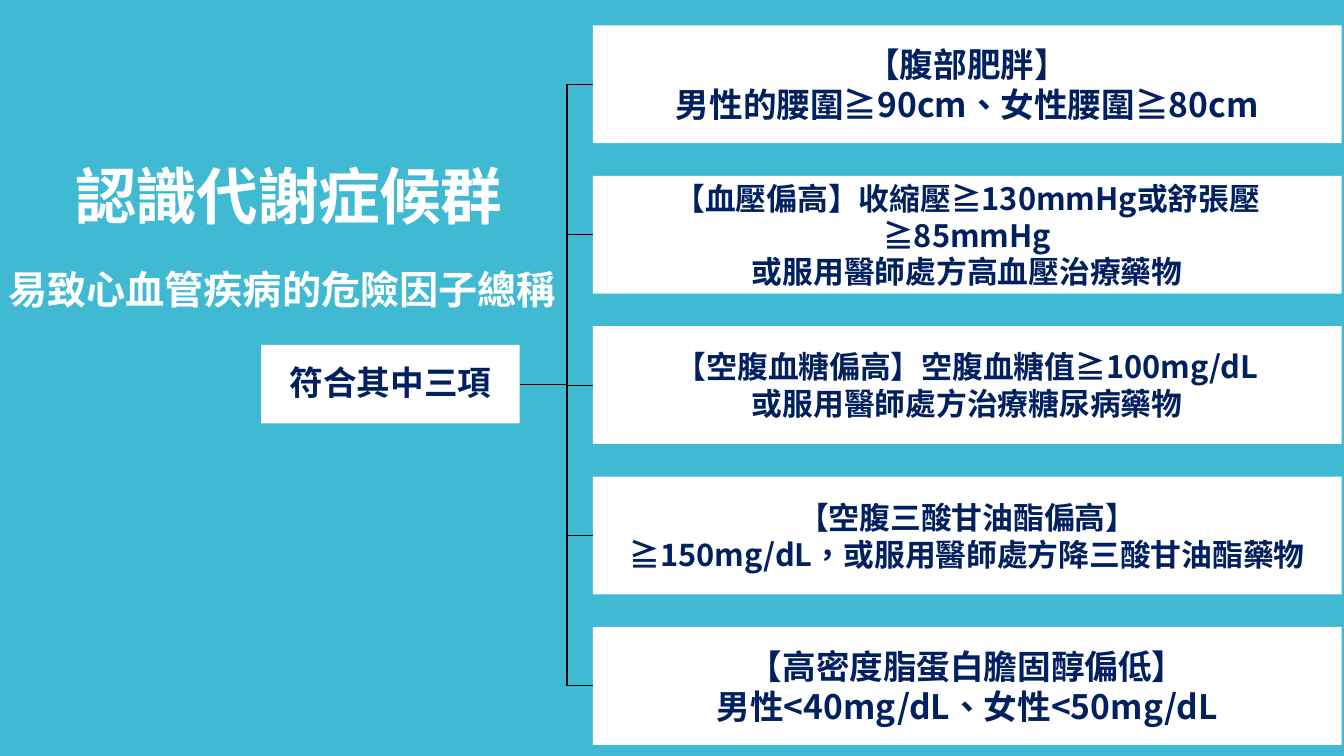
from dataclasses import dataclass

from lxml.etree import SubElement
from pptx import Presentation
from pptx.dml.color import RGBColor
from pptx.enum.shapes import MSO_SHAPE
from pptx.enum.text import MSO_ANCHOR, MSO_AUTO_SIZE, PP_ALIGN
from pptx.oxml.ns import qn
from pptx.util import Cm, Pt


@dataclass(frozen=True)
class Theme:
    background: RGBColor = RGBColor(0x40, 0xBA, 0xD2)
    white: RGBColor = RGBColor(0xFF, 0xFF, 0xFF)
    navy: RGBColor = RGBColor(0x00, 0x20, 0x60)
    black: RGBColor = RGBColor(0x00, 0x00, 0x00)
    chinese_font: str = "Noto Sans CJK SC"
    heading_font: str = "Cabin"
    accent_font: str = "Arial"
    title_size: int = 44
    subtitle_size: int = 28
    large_size: int = 24
    medium_size: int = 22
    line_width: float = 0.75


class SlideBuilder:
    def __init__(self, slide, theme):
        self.slide = slide
        self.theme = theme
        fill = slide.background.fill
        fill.solid()
        fill.fore_color.rgb = theme.background

    def add_run(self, paragraph, text, size, color, font_name):
        run = paragraph.add_run()
        run.text = text
        run.font.size = Pt(size)
        run.font.bold = True
        run.font.color.rgb = color
        run.font.name = font_name
        properties = run.font._element
        properties.set("lang", "zh-TW")
        east_asian = SubElement(properties, qn("a:ea"))
        east_asian.set("typeface", self.theme.chinese_font)
        return run

    def fill_placeholder(self, placeholder, box, runs, size):
        placeholder.left, placeholder.top, placeholder.width, placeholder.height = map(Cm, box)
        frame = placeholder.text_frame
        frame.word_wrap = True
        frame.auto_size = MSO_AUTO_SIZE.NONE
        frame.vertical_anchor = MSO_ANCHOR.MIDDLE
        paragraph = frame.paragraphs[0]
        paragraph.alignment = PP_ALIGN.CENTER
        paragraph.line_spacing = 0.9
        for text, font_name in runs:
            self.add_run(paragraph, text, size, self.theme.white, font_name)
        return paragraph

    def add_title(self, box, text):
        paragraph = self.fill_placeholder(
            self.slide.shapes.title, box, [(text, self.theme.chinese_font)], self.theme.title_size)
        paragraph.runs[0].font._element.set("spc", "-60")

    def add_subtitle(self, box, runs):
        paragraph = self.fill_placeholder(
            self.slide.placeholders[1], box, runs, self.theme.subtitle_size)
        paragraph.space_before = Pt(12)
        properties = paragraph._p.get_or_add_pPr()
        properties.set("marL", "0")
        properties.set("indent", "0")
        SubElement(properties, qn("a:buNone"))

    def add_box(self, box, lines, size, line_spacing=1.0):
        shape = self.slide.shapes.add_shape(MSO_SHAPE.RECTANGLE, *map(Cm, box))
        shape.shadow.inherit = False
        shape.fill.solid()
        shape.fill.fore_color.rgb = self.theme.white
        shape.line.fill.background()
        frame = shape.text_frame
        frame.word_wrap = True
        frame.vertical_anchor = MSO_ANCHOR.MIDDLE
        frame.margin_left = frame.margin_right = Cm(0.05)
        frame.margin_top = frame.margin_bottom = Cm(0.05)
        for index, text in enumerate(lines):
            paragraph = frame.add_paragraph() if index else frame.paragraphs[0]
            paragraph.alignment = PP_ALIGN.CENTER
            paragraph.line_spacing = line_spacing
            self.add_run(paragraph, text, size, self.theme.navy, self.theme.chinese_font)

    def add_branch(self, start, bend_x, end):
        points = [start, (bend_x, start[1]), (bend_x, end[1]), end]
        points = [(Cm(x), Cm(y)) for x, y in points]
        builder = self.slide.shapes.build_freeform(*points[0])
        builder.add_line_segments(points[1:], close=False)
        shape = builder.convert_to_shape()
        shape.shadow.inherit = False
        shape.fill.background()
        shape.line.color.rgb = self.theme.black
        shape.line.width = Pt(self.theme.line_width)


def main():
    theme = Theme()
    presentation = Presentation()
    presentation.slide_width = Cm(33.87)
    presentation.slide_height = Cm(19.05)
    slide = presentation.slides.add_slide(presentation.slide_layouts[1])
    builder = SlideBuilder(slide, theme)

    # Heading
    builder.add_title((0.64, 3.07, 13.26, 3.91), "認識代謝症候群")
    builder.add_subtitle((-0.28, 5.33, 14.78, 4.04), [
        ("易致", theme.heading_font),
        ("心血管疾病的危險因子", theme.accent_font),
        ("總稱", theme.heading_font),
    ])

    # Five criteria, evenly stacked
    criteria = [
        (["【腹部肥胖】", "男性的腰圍≧90cm、女性腰圍≧80cm"], theme.large_size),
        (["【血壓偏高】收縮壓≧130mmHg或舒張壓≧85mmHg", "或服用醫師處方高血壓治療藥物"],
         theme.medium_size),
        (["【空腹血糖偏高】空腹血糖值≧100mg/dL", "或服用醫師處方治療糖尿病藥物"],
         theme.medium_size),
        (["【空腹三酸甘油酯偏高】", "≧150mg/dL，或服用醫師處方降三酸甘油酯藥物"],
         theme.medium_size),
        (["【高密度脂蛋白膽固醇偏低】", "男性<40mg/dL、女性<50mg/dL"], theme.large_size),
    ]
    left, first_top, width, height, pitch = 14.94, 0.64, 18.87, 2.97, 3.79
    tops = [first_top + index * pitch for index in range(len(criteria))]

    # Branches from the root box to each criterion
    root_left, root_top, root_width, root_height = root = (6.58, 8.69, 6.52, 1.98)
    root_end = (root_left + root_width, root_top + root_height / 2)
    for top in tops:
        builder.add_branch(root_end, 14.29, (left, top + height / 2))

    # Boxes
    builder.add_box(root, ["符合其中三項"], theme.large_size, line_spacing=0.9)
    for top, (lines, size) in zip(tops, criteria):
        builder.add_box((left, top, width, height), lines, size)

    presentation.save("out.pptx")


if __name__ == "__main__":
    main()
